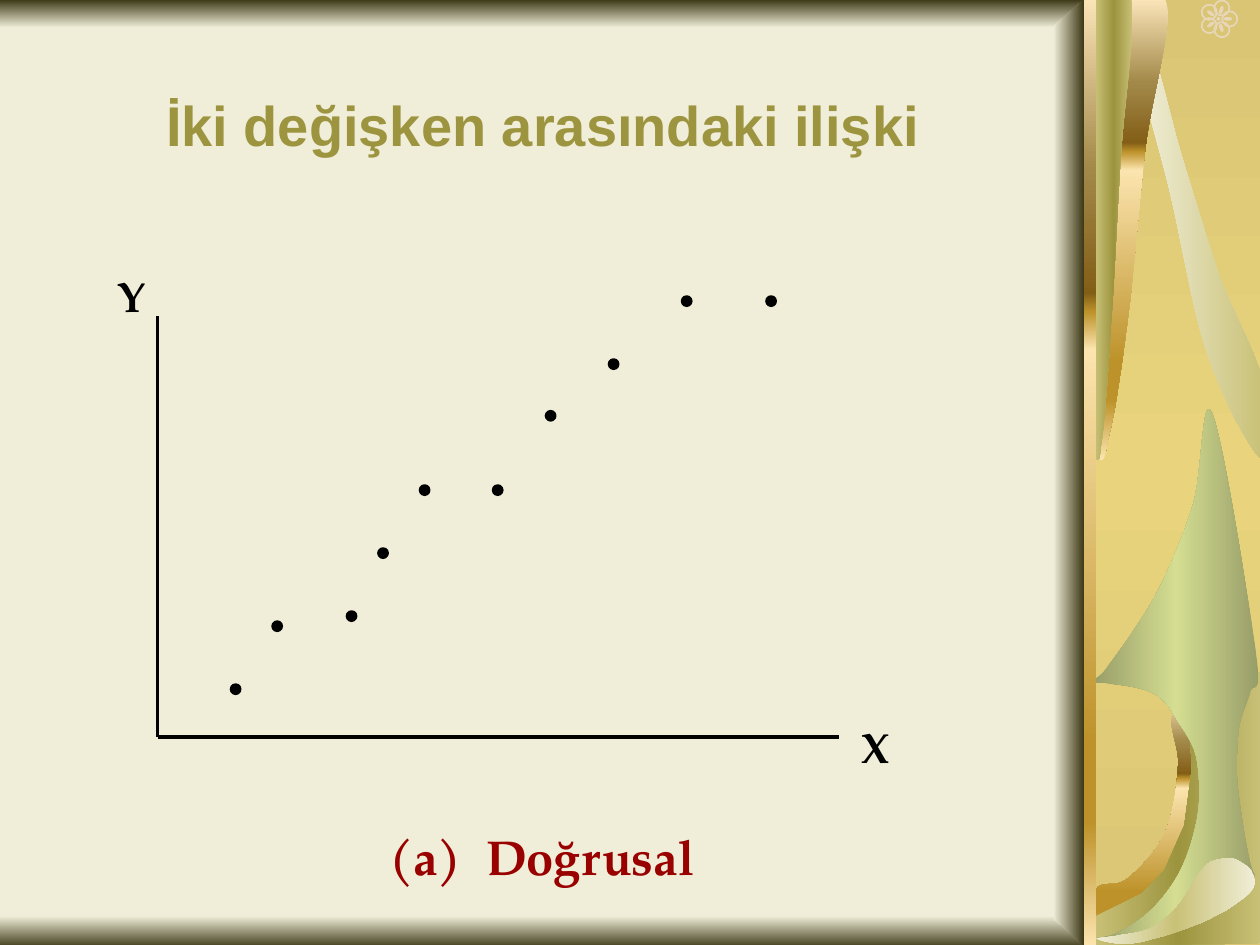
from math import cos, sin, radians

from lxml.etree import SubElement
from pptx import Presentation
from pptx.dml.color import RGBColor
from pptx.enum.shapes import MSO_CONNECTOR as Line, MSO_SHAPE as Kind
from pptx.enum.text import MSO_ANCHOR as Anchor, PP_ALIGN as Align
from pptx.oxml.ns import qn
from pptx.util import Inches, Pt

CREAM = RGBColor(0xF0, 0xEE, 0xD8)
DARK = RGBColor(0x3F, 0x3B, 0x19)
SAND = RGBColor(0xD9, 0xC5, 0x74)
GLOW = RGBColor(0xE9, 0xD4, 0x7D)
KHAKI = RGBColor(0xC9, 0xC1, 0x77)
OLIVE = RGBColor(0x9D, 0x94, 0x3F)
MOSS = RGBColor(0x98, 0x9E, 0x68)
LIME = RGBColor(0xD4, 0xDD, 0x91)
PETAL = RGBColor(0xE7, 0xD6, 0xB7)
PEACH = RGBColor(0xFA, 0xE3, 0xB7)
TAN = RGBColor(0xA2, 0x89, 0x49)
BROWN = RGBColor(0x83, 0x5E, 0x17)
AMBER = RGBColor(0xBD, 0x92, 0x2A)
PALE = RGBColor(0xFB, 0xE4, 0xAE)
BLACK = RGBColor(0, 0, 0)
RED = RGBColor(0x99, 0, 0)

GOLD = [(0, PEACH), (18, TAN), (31, BROWN), (33, AMBER), (37, PALE),
        (79, AMBER), (87, AMBER), (100, PALE)]
GREEN = [(0, KHAKI), (50, OLIVE), (100, KHAKI)]
LEAF = [(0, MOSS), (50, LIME), (100, MOSS)]
FADE = [(0, CREAM), (100, DARK)]

deck = Presentation()
deck.slide_width, deck.slide_height = Inches(10), Inches(7.5)
slide = deck.slides.add_slide(deck.slide_layouts[6])
slide.background.fill.solid()
slide.background.fill.fore_color.rgb = CREAM
shapes = slide.shapes


def paint(shape, stops, angle=0):
    """Fill with gradient stops (percent, colour); angle runs clockwise."""
    shape.shadow.inherit = False
    shape.line.fill.background()
    shape.fill.gradient()
    shape.fill.gradient_angle = (360 - angle) % 360
    rows = shape.element.spPr.find(".//" + qn("a:gsLst"))
    rows.clear()
    for spot, color in stops:
        stop = SubElement(rows, qn("a:gs"), pos=str(spot * 1000))
        SubElement(stop, qn("a:srgbClr"), val=str(color))


def trace(start, parts, steps=12):
    """Closed outline: a pair is a straight part, six numbers a Bezier part."""
    points = [start]
    for part in parts:
        if len(part) == 2:
            points.append(part)
            continue
        (ax, ay), (bx, by, cx, cy, dx, dy) = points[-1], part
        for i in range(1, steps + 1):
            t = i / steps
            u = 1 - t
            k = u ** 3, 3 * u * u * t, 3 * u * t * t, t ** 3
            points.append((k[0] * ax + k[1] * bx + k[2] * cx + k[3] * dx,
                           k[0] * ay + k[1] * by + k[2] * cy + k[3] * dy))
    spots = [(Inches(x), Inches(y)) for x, y in points]
    pen = shapes.build_freeform(*spots[0])
    pen.add_line_segments(spots[1:], close=True)
    return pen.convert_to_shape()


# Frame shading and side panel
for box, stops in [
    ((0, 7.27, 8.84, 0.25), FADE),
    ((0, 0, 8.84, 0.22), [(0, DARK), (100, CREAM)]),
    ((8.7, 0, 1.32, 7.5), [(0, SAND), (50, GLOW), (100, SAND)]),
]:
    paint(shapes.add_shape(Kind.RECTANGLE, *map(Inches, box)), stops, 90)

# Flower: five outlined petals with veins around a dot
for radius, wide, high, hollow in [(0.09, 0.12, 0.12, True),
                                   (0.075, 0.07, 0.03, False),
                                   (0, 0.03, 0.03, False)]:
    for turn in range(0, 360 if radius else 1, 72):
        x = 9.67 + radius * cos(radians(turn))
        y = 0.15 + radius * sin(radians(turn))
        petal = shapes.add_shape(Kind.OVAL, Inches(x - wide / 2), Inches(y - high / 2),
                                 Inches(wide), Inches(high))
        petal.rotation = turn
        petal.shadow.inherit = False
        if hollow:
            petal.fill.background()
            petal.line.color.rgb = PETAL
            petal.line.width = Pt(1)
        else:
            petal.fill.solid()
            petal.fill.fore_color.rgb = PETAL
            petal.line.fill.background()

# Ribbons and leaves of the side panel
low_band = trace((9.34, 5.64), [
    (9.23, 5.7, 9.37, 5.92, 9.35, 6.08), (9.34, 6.25, 9.31, 6.48, 9.24, 6.62),
    (9.17, 6.77, 9.03, 6.91, 8.94, 6.98), (8.85, 7.05, 8.74, 6.98, 8.7, 7.06),
    (8.7, 7.49), (10, 7.49), (10, 5.68), (9.89, 5.37, 9.48, 5.64, 9.34, 5.64)])
paint(low_band, GOLD, 90)

corner = trace((8.68, 7.5), [
    (8.68, 7.28), (9.05, 7.1), (9.24, 6.91), (9.4, 6.55), (9.46, 6.1),
    (9.44, 5.76), (9.87, 5.31), (10.02, 5.34), (10.02, 7.49)])
paint(corner, GREEN)

leaf = trace((9.62, 3.28), [
    (9.54, 3.08, 9.54, 3.77, 9.47, 4), (9.4, 4.23, 9.3, 4.47, 9.19, 4.69),
    (9.08, 4.9, 8.89, 5.16, 8.8, 5.28), (8.72, 5.4, 8.67, 5.38, 8.68, 5.41),
    (8.68, 5.43, 8.76, 5.41, 8.84, 5.43), (8.93, 5.44, 9.08, 5.46, 9.17, 5.51),
    (9.25, 5.56, 9.3, 5.64, 9.35, 5.73), (9.41, 5.82, 9.48, 5.91, 9.5, 6.04),
    (9.52, 6.17, 9.53, 6.34, 9.5, 6.5), (9.47, 6.66, 9.41, 6.86, 9.31, 7.01),
    (9.21, 7.16, 9.08, 7.3, 8.89, 7.39), (8.78, 7.46, 8.69, 7.43, 8.71, 7.45),
    (8.73, 7.46, 8.9, 7.5, 9.01, 7.48), (9.12, 7.46, 9.26, 7.41, 9.34, 7.34),
    (9.43, 7.28, 9.48, 7.15, 9.54, 7.07), (9.6, 7, 9.65, 6.93, 9.71, 6.9),
    (9.76, 6.87, 9.83, 6.89, 9.88, 6.9), (9.92, 6.91, 9.95, 6.97, 9.96, 6.95),
    (9.96, 6.94, 9.93, 6.91, 9.91, 6.79), (9.88, 6.67, 9.84, 6.39, 9.82, 6.22),
    (9.81, 6.05, 9.82, 5.91, 9.83, 5.79), (9.85, 5.67, 9.89, 5.6, 9.92, 5.5),
    (9.94, 5.4, 10.02, 5.56, 9.97, 5.2), (9.92, 4.84, 9.71, 3.48, 9.62, 3.28)])
paint(leaf, LEAF)

blade = trace((9.14, 0.4), [
    (9.2, 0.51, 9.29, 0.94, 9.38, 1.24), (9.47, 1.54, 9.58, 1.9, 9.68, 2.2),
    (9.79, 2.49, 9.96, 2.78, 10.02, 3.02), (10.02, 3.65),
    (9.94, 3.61, 9.7, 3.16, 9.58, 2.8), (9.46, 2.44, 9.37, 1.87, 9.28, 1.5),
    (9.19, 1.13, 9.07, 0.76, 9.05, 0.58), (9.02, 0.4, 9.09, 0.29, 9.14, 0.4)])
paint(blade, [(0, CREAM), (100, KHAKI)])

top_band = trace((8.69, 3.64), [
    (8.78, 3.67, 8.76, 3.64, 8.8, 3.46), (8.85, 3.28, 8.9, 2.92, 8.95, 2.54),
    (9, 2.16, 9.04, 1.6, 9.09, 1.18), (9.14, 0.75, 9.32, 0.2, 9.25, 0), (8.69, 0)])
paint(top_band, GOLD, 90)

top_leaf = trace((8.69, 3.64), [
    (8.74, 3.67, 8.72, 3.64, 8.75, 3.46), (8.77, 3.28, 8.8, 2.92, 8.82, 2.54),
    (8.85, 2.16, 8.87, 1.6, 8.9, 1.18), (8.93, 0.76, 9.02, 0.2, 8.98, 0), (8.69, 0)])
paint(top_leaf, GREEN)

rod = shapes.add_shape(Kind.RECTANGLE, Inches(8.6), 0, Inches(0.1), Inches(7.5))
paint(rod, GOLD, 90)

curl = trace((8.7, 7.45), [
    (8.7, 7.44, 8.83, 7.44, 8.9, 7.42), (8.98, 7.41, 9.07, 7.4, 9.15, 7.36),
    (9.22, 7.32, 9.3, 7.25, 9.35, 7.19), (9.41, 7.12, 9.45, 7.03, 9.49, 6.97),
    (9.54, 6.91, 9.56, 6.87, 9.61, 6.84), (9.66, 6.82, 9.72, 6.81, 9.77, 6.81),
    (9.81, 6.82, 9.83, 6.83, 9.86, 6.85), (9.89, 6.87, 9.93, 6.89, 9.94, 6.93),
    (9.96, 6.96, 9.98, 7.01, 9.94, 7.06), (9.91, 7.11, 9.81, 7.17, 9.74, 7.22),
    (9.66, 7.26, 9.58, 7.31, 9.49, 7.34), (9.39, 7.38, 9.25, 7.43, 9.15, 7.45),
    (9.06, 7.48, 8.99, 7.49, 8.91, 7.49), (8.83, 7.49, 8.71, 7.46, 8.7, 7.45)])
paint(curl, [(0, CREAM), (50, KHAKI), (100, CREAM)])

bevel = trace((8.6, 0), [(8.36, 0.21), (8.36, 7.29), (8.6, 7.5)])
paint(bevel, FADE)

# Title, axis labels and caption
SERIF = "TeX Gyre Pagella"
for words, box, align, anchor, color, look in [
    ("İki değişken arasındaki ilişki", (1.22, 0.36, 6.3, 1.25), Align.LEFT,
     Anchor.MIDDLE, OLIVE, {"name": "Arial", "size": Pt(32), "bold": True}),
    ("X", (6.66, 5.68, 0.58, 0.5), Align.CENTER,
     Anchor.TOP, BLACK, {"name": SERIF, "size": Pt(24), "bold": True}),
    ("Y", (0.75, 2.1, 0.58, 0.5), Align.CENTER,
     Anchor.TOP, BLACK, {"name": SERIF, "size": Pt(24), "bold": True}),
    ("(a)  Doğrusal", (2.09, 6.51, 4.42, 0.57), Align.CENTER,
     Anchor.TOP, RED, {"name": SERIF, "size": Pt(28), "bold": True}),
]:
    frame = shapes.add_textbox(*map(Inches, box)).text_frame
    frame.word_wrap = True
    frame.vertical_anchor = anchor
    para = frame.paragraphs[0]
    para.alignment = align
    run = para.add_run()
    run.text = words
    run.font.color.rgb = color
    for key, value in look.items():
        setattr(run.font, key, value)

# Axes and scatter points
for ends in [(1.25, 2.51, 1.25, 5.85), (1.25, 5.85, 6.66, 5.85)]:
    axis = shapes.add_connector(Line.STRAIGHT, *map(Inches, ends))
    axis.line.color.rgb = BLACK
    axis.line.width = Pt(2.25)
    SubElement(axis._element.spPr, qn("a:effectLst"))

for x, y in [(2.16, 4.93), (3, 4.35), (2.75, 4.85), (1.83, 5.43), (3.33, 3.85),
             (3.91, 3.85), (4.33, 3.26), (4.83, 2.85), (5.41, 2.35), (6.08, 2.35)]:
    dot = shapes.add_shape(Kind.OVAL, Inches(x), Inches(y), Inches(0.08), Inches(0.08))
    dot.shadow.inherit = False
    dot.fill.solid()
    dot.fill.fore_color.rgb = dot.line.color.rgb = BLACK
    dot.line.width = Pt(1)

deck.save("out.pptx")
